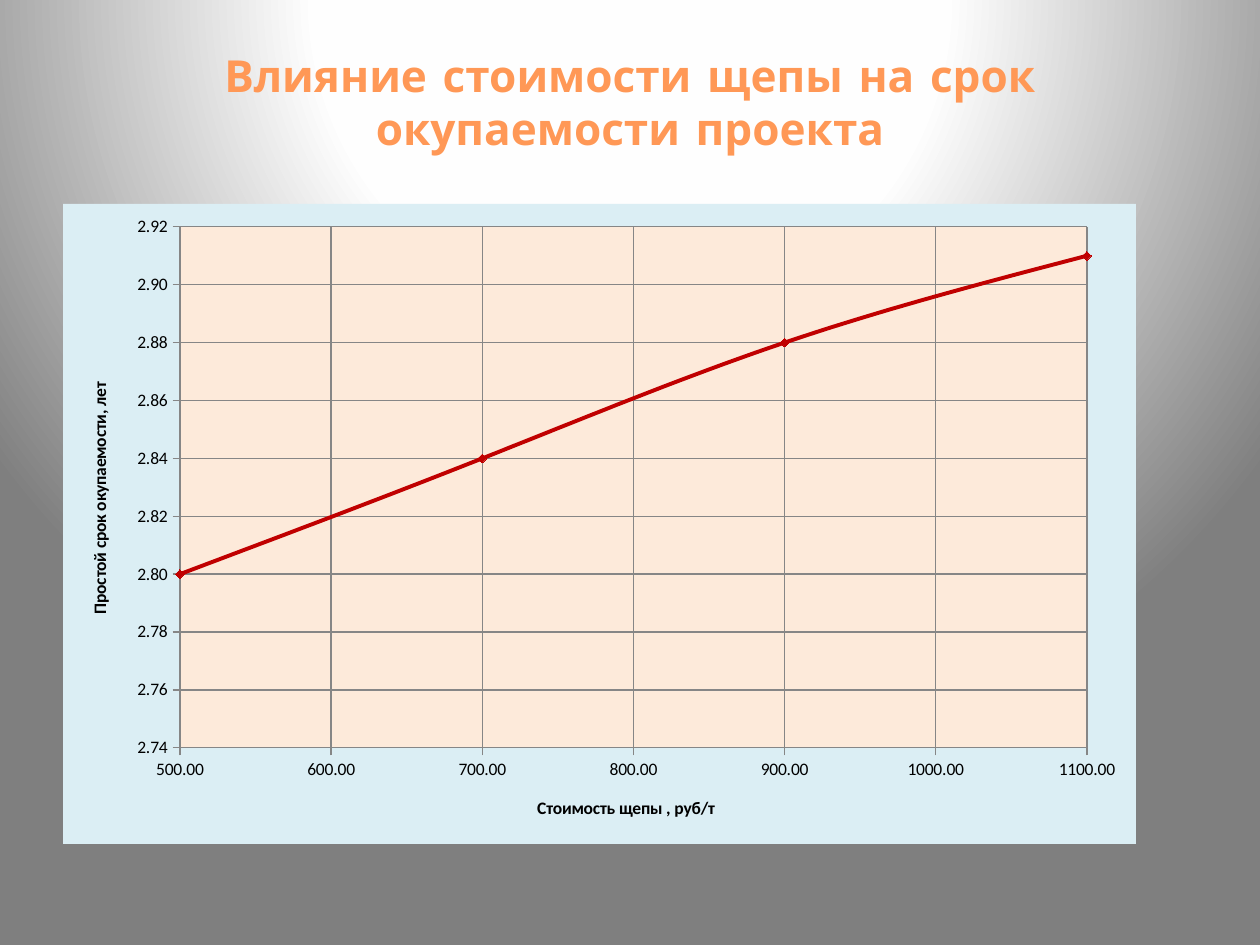
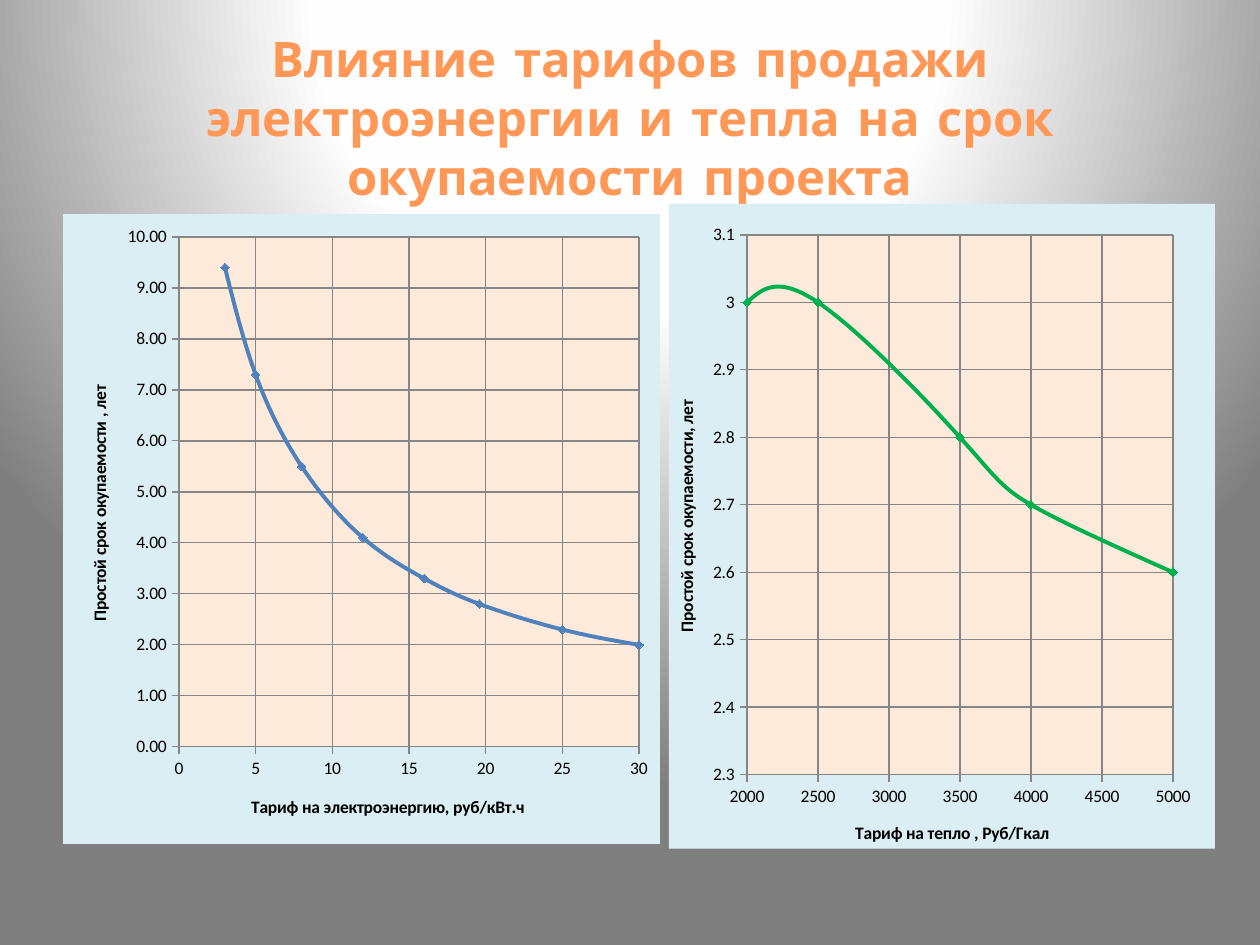
"""Builds two slides of payback-period charts."""
from pptx import Presentation
from pptx.chart.data import XyChartData
from pptx.dml.color import RGBColor
from pptx.enum.chart import XL_CHART_TYPE, XL_MARKER_STYLE, XL_TICK_MARK
from pptx.enum.text import MSO_ANCHOR, MSO_AUTO_SIZE, PP_ALIGN
from pptx.oxml import parse_xml
from pptx.oxml.ns import nsdecls, qn
from pptx.util import Pt

PX = 914400 / 126
COLORS = {
    "panel": "DBEEF4", "plot": "FDEADA", "grid": "868686", "text": "000000",
    "chips": "C00000", "power": "4F81BD", "heat": "00B050",
}
BACKGROUND_STOPS = [(0, "FFFFFF"), (40, "FEFEFE"), (100, "7F7F7F")]
TITLE_STOPS = [(0, "9D4700"), (78, "FF9856"), (100, "FFF5F1")]
TITLE_FONT, CHART_FONT = "Comic Neue", "Calibri"


def px(length):
    """Turn pixels into EMU."""
    return round(length * PX)


def color(name):
    """Look up a named colour."""
    return RGBColor.from_string(COLORS[name])


def set_gradient(fill, parent, stops, direction):
    """Give a fill the stops and direction of a gradient."""
    fill.gradient()
    stop_xml = "".join(
        f'<a:gs pos="{position * 1000}"><a:srgbClr val="{value}"/></a:gs>'
        for position, value in stops)
    gradient = parse_xml(f'<a:gradFill {nsdecls("a")} rotWithShape="1">'
                         f'<a:gsLst>{stop_xml}</a:gsLst>{direction}</a:gradFill>')
    previous = parent.find(".//" + qn("a:gradFill"))
    previous.getparent().replace(previous, gradient)


def set_background(master):
    """Paint the shared radial background."""
    direction = ('<a:path path="circle"><a:fillToRect l="50000" t="-80000" '
                 'r="50000" b="180000"/></a:path>')
    set_gradient(master.background.fill, master.element, BACKGROUND_STOPS, direction)


def add_titled_slide(presentation, text, size, height):
    """Add a slide with a formatted title."""
    slide = presentation.slides.add_slide(presentation.slide_layouts[5])
    title = slide.shapes.title
    title.left, title.top, title.width, title.height = map(px, (63, 38, 1134, height))
    frame = title.text_frame
    frame.auto_size = MSO_AUTO_SIZE.NONE
    frame.word_wrap = True
    frame.vertical_anchor = MSO_ANCHOR.MIDDLE
    paragraph = frame.paragraphs[0]
    paragraph.alignment = PP_ALIGN.CENTER
    run = paragraph.add_run()
    run.text = text
    run.font.name, run.font.size, run.font.bold = TITLE_FONT, Pt(size), True
    set_gradient(run.font.fill, title.element, TITLE_STOPS,
                 '<a:lin ang="5400000" scaled="0"/>')
    return slide


def set_layout(element, index, chart_box, left, top, width=None, height=None):
    """Place a chart part by its pixel position on the slide."""
    for layout in element.findall(qn("c:layout")):
        element.remove(layout)
    chart_left, chart_top, chart_width, chart_height = chart_box
    parts = '<c:xMode val="edge"/><c:yMode val="edge"/>'
    values = {"x": (left - chart_left) / chart_width,
              "y": (top - chart_top) / chart_height}
    if width:
        parts = '<c:layoutTarget val="inner"/>' + parts
        values.update(w=width / chart_width, h=height / chart_height)
    parts += "".join(f'<c:{key} val="{value:.4f}"/>' for key, value in values.items())
    element.insert(index, parse_xml(
        f'<c:layout {nsdecls("c")}><c:manualLayout>{parts}</c:manualLayout></c:layout>'))


def solid_area(name):
    """Make the properties of a filled area without a border."""
    return parse_xml(
        f'<c:spPr {nsdecls("c", "a")}><a:solidFill><a:srgbClr val="{COLORS[name]}"/>'
        '</a:solidFill><a:ln><a:noFill/></a:ln></c:spPr>')


def format_axis(axis, chart_box, scale, number_format, title, title_at, rotation):
    """Set the scale, grid, labels and title of an axis."""
    axis.minimum_scale, axis.maximum_scale, axis.major_unit = scale
    axis.has_major_gridlines = True
    for line in (axis.format.line, axis.major_gridlines.format.line):
        line.color.rgb = color("grid")
        line.width = Pt(0.75)
    axis.major_tick_mark = XL_TICK_MARK.OUTSIDE
    axis.minor_tick_mark = XL_TICK_MARK.NONE
    axis.tick_labels.number_format = number_format
    axis.tick_labels.number_format_is_linked = False
    run = axis.axis_title.text_frame.paragraphs[0].add_run()
    run.text = title
    run.font.name, run.font.size, run.font.bold = CHART_FONT, Pt(10), True
    run.font.color.rgb = color("text")
    element = axis.axis_title._element
    element.find(".//" + qn("a:bodyPr")).set("rot", str(rotation))
    set_layout(element, 1, chart_box, *title_at)


def add_payback_chart(slide, box, plot_box, points, line_color, x_axis, y_axis):
    """Add a smooth scatter chart of payback period."""
    data = XyChartData()
    series_data = data.add_series("Series 1")
    for x, y in points:
        series_data.add_data_point(x, y)
    chart = slide.shapes.add_chart(
        XL_CHART_TYPE.XY_SCATTER_SMOOTH, *map(px, box), data).chart
    chart.has_legend = chart.has_title = False
    chart.font.name, chart.font.size = CHART_FONT, Pt(10)
    chart.font.color.rgb = color("text")
    chart.plots[0].vary_by_categories = False

    series = chart.plots[0].series[0]
    series._element.get_or_add_smooth().val = True
    series.format.line.color.rgb = color(line_color)
    series.format.line.width = Pt(2.25)
    series.marker.style = XL_MARKER_STYLE.DIAMOND
    series.marker.size = 5
    series.marker.format.fill.solid()
    series.marker.format.fill.fore_color.rgb = color(line_color)
    series.marker.format.line.color.rgb = color(line_color)

    format_axis(chart.category_axis, box, *x_axis, rotation=0)
    format_axis(chart.value_axis, box, *y_axis, rotation=-5400000)
    chart_element = chart.element.find(qn("c:chart"))
    chart_element.addnext(solid_area("panel"))
    plot_area = chart_element.find(qn("c:plotArea"))
    set_layout(plot_area, 0, box, *plot_box)
    plot_area.append(solid_area("plot"))


def main():
    """Build and save the presentation."""
    presentation = Presentation()
    presentation.slide_width, presentation.slide_height = px(1260), px(945)
    set_background(presentation.slide_master)

    slide = add_titled_slide(
        presentation, "Влияние стоимости щепы на срок окупаемости проекта", 25.2, 127)
    add_payback_chart(
        slide, (63, 204, 1073, 640), (180, 227, 907, 521),
        [(500, 2.8), (700, 2.84), (900, 2.88), (1100, 2.91)], "chips",
        ((500, 1100, 100), "0.00", "Стоимость щепы , руб/т", (534, 793)),
        ((2.74, 2.92, 0.02), "0.00", "Простой срок окупаемости, лет", (85, 379)))

    slide = add_titled_slide(
        presentation,
        "Влияние тарифов продажи электроэнергии и тепла на срок окупаемости проекта",
        28, 158)
    add_payback_chart(
        slide, (63, 214, 597, 630), (179, 237, 460, 510),
        [(3, 9.4), (5, 7.3), (8, 5.5), (12, 4.1),
         (16, 3.3), (19.6, 2.8), (25, 2.3), (30, 2)], "power",
        ((0, 30, 5), "General", "Тариф на электроэнергию, руб/кВт.ч", (248, 792)),
        ((0, 10, 1), "0.00", "Простой срок окупаемости , лет", (85, 382)))
    add_payback_chart(
        slide, (669, 204, 546, 645), (747, 235, 426, 540),
        [(2000, 3), (2500, 3), (3500, 2.8), (4000, 2.7), (5000, 2.6)], "heat",
        ((2000, 5000, 500), "General", "Тариф на тепло , Руб/Гкал", (852, 819)),
        ((2.3, 3.1, 0.1), "General", "Простой срок окупаемости, лет", (672, 397)))
    presentation.save("out.pptx")


if __name__ == "__main__":
    main()
